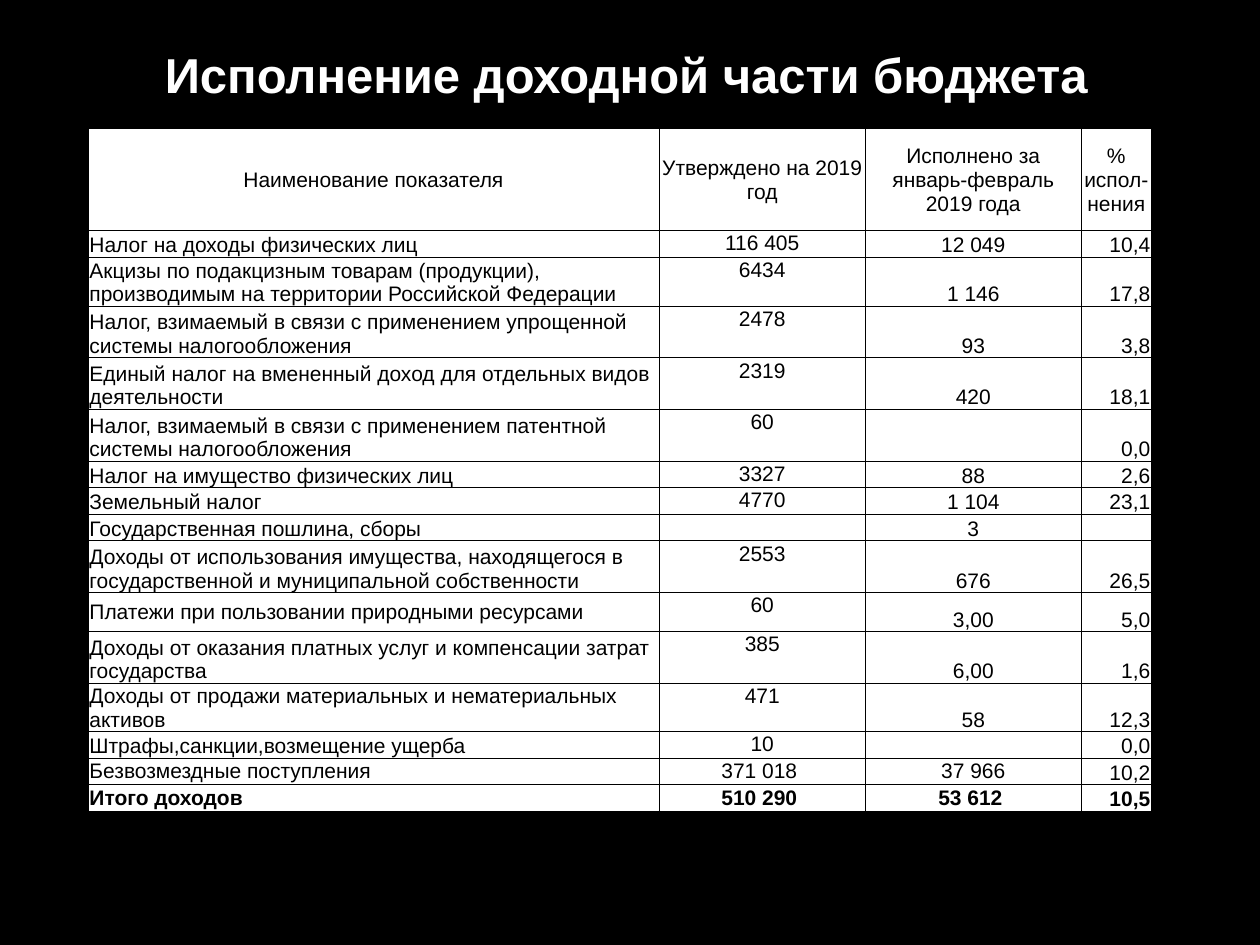
"""Builds a slide with a table of budget revenue execution."""
from lxml import etree
from pptx import Presentation
from pptx.dml.color import RGBColor
from pptx.enum.text import MSO_ANCHOR, PP_ALIGN
from pptx.oxml.ns import qn
from pptx.util import Inches, Pt

TOP, MIDDLE, BOTTOM = MSO_ANCHOR.TOP, MSO_ANCHOR.MIDDLE, MSO_ANCHOR.BOTTOM
LEFT, CENTER, RIGHT, JUSTIFY = PP_ALIGN.LEFT, PP_ALIGN.CENTER, PP_ALIGN.RIGHT, PP_ALIGN.JUSTIFY
BLACK, WHITE = "000000", "FFFFFF"

COLUMN_WIDTHS = [4.53, 1.64, 1.71, 0.56]
ROWS = [
    (0.81, "Наименование показателя", "Утверждено на 2019 год", "Исполнено за январь-февраль 2019 года", "% испол-нения"),
    (0.21, "Налог на доходы физических лиц", "116 405", "12 049", "10,4"),
    (0.39, "Акцизы по подакцизным товарам (продукции), производимым на территории Российской Федерации", "6434", "1 146", "17,8"),
    (0.41, "Налог, взимаемый в связи с применением упрощенной системы налогообложения", "2478", "93", "3,8"),
    (0.41, "Единый налог на вмененный доход для отдельных видов деятельности", "2319", "420", "18,1"),
    (0.41, "Налог, взимаемый в связи с применением патентной системы налогообложения", "60", "", "0,0"),
    (0.21, "Налог на имущество физических лиц", "3327", "88", "2,6"),
    (0.21, "Земельный налог", "4770", "1 104", "23,1"),
    (0.21, "Государственная пошлина, сборы", "", "3", ""),
    (0.41, "Доходы от использования имущества, находящегося в государственной и муниципальной собственности", "2553", "676", "26,5"),
    (0.31, "Платежи при пользовании природными ресурсами", "60", "3,00", "5,0"),
    (0.41, "Доходы от оказания платных услуг и компенсации затрат государства", "385", "6,00", "1,6"),
    (0.38, "Доходы от продажи материальных и нематериальных активов", "471", "58", "12,3"),
    (0.21, "Штрафы,санкции,возмещение ущерба", "10", "", "0,0"),
    (0.21, "Безвозмездные поступления", "371 018 ", "37 966", "10,2"),
    (0.21, "Итого доходов", "510 290 ", "53 612 ", "10,5"),
]
HEADER_ROW, RESOURCES_ROW, TOTAL_ROW = 0, 10, len(ROWS) - 1
SUMMARY_ROWS = (TOTAL_ROW - 1, TOTAL_ROW)


def color(value):
    """Turns a hex string into a colour."""
    return RGBColor.from_string(value)


def add_borders(cell):
    """Draws thin black lines on all sides of a cell."""
    properties = cell._tc.get_or_add_tcPr()
    for position, side in enumerate(("a:lnL", "a:lnR", "a:lnT", "a:lnB")):
        line = etree.Element(qn(side), w=str(Pt(0.5)))
        fill = etree.SubElement(line, qn("a:solidFill"))
        etree.SubElement(fill, qn("a:srgbClr"), val=BLACK)
        properties.insert(position, line)


deck = Presentation()
deck.slide_width, deck.slide_height = Inches(10), Inches(7.5)
page = deck.slides.add_slide(deck.slide_layouts[5])
page.background.fill.solid()
page.background.fill.fore_color.rgb = color(BLACK)

title = page.shapes.title
title.left, title.top, title.width, title.height = Inches(0.47), Inches(0.23), Inches(9), Inches(0.72)
title.text_frame.vertical_anchor = MIDDLE
para = title.text_frame.paragraphs[0]
para.alignment = CENTER
span = para.add_run()
span.text = "Исполнение доходной части бюджета"
span.font.name, span.font.size, span.font.bold = "Arial", Pt(28), True
span.font.color.rgb = color(WHITE)

table_height = sum(row[0] for row in ROWS)
table = page.shapes.add_table(
    len(ROWS), len(COLUMN_WIDTHS), Inches(0.7), Inches(1.02), Inches(sum(COLUMN_WIDTHS)), Inches(table_height)
).table
table.first_row = table.horz_banding = False
for column, width in zip(table.columns, COLUMN_WIDTHS):
    column.width = Inches(width)

for row_index, (height, *texts) in enumerate(ROWS):
    table.rows[row_index].height = Inches(height)
    name_alignment = JUSTIFY if row_index in SUMMARY_ROWS else LEFT
    alignments = [name_alignment, CENTER, CENTER, RIGHT]
    anchors = [BOTTOM, TOP, BOTTOM, BOTTOM]
    if row_index == HEADER_ROW:
        alignments, anchors = [CENTER] * 4, [MIDDLE] * 4
    elif row_index == RESOURCES_ROW:
        anchors[0] = MIDDLE
    elif row_index in SUMMARY_ROWS:
        anchors = [TOP, TOP, TOP, BOTTOM]

    for column_index, text in enumerate(texts):
        cell = table.cell(row_index, column_index)
        cell.fill.solid()
        cell.fill.fore_color.rgb = color(WHITE)
        add_borders(cell)
        cell.margin_left = cell.margin_right = cell.margin_top = Inches(0.01)
        cell.margin_bottom = Inches(0)
        cell.vertical_anchor = anchors[column_index]
        para = cell.text_frame.paragraphs[0]
        para.alignment = alignments[column_index]
        if text:
            span = para.add_run()
            span.text = text
            span.font.name, span.font.size = "Arial", Pt(12)
            span.font.bold = row_index == TOTAL_ROW
            span.font.color.rgb = color(BLACK)
        else:
            etree.SubElement(para._p, qn("a:endParaRPr"), sz="1200")

deck.save("out.pptx")
